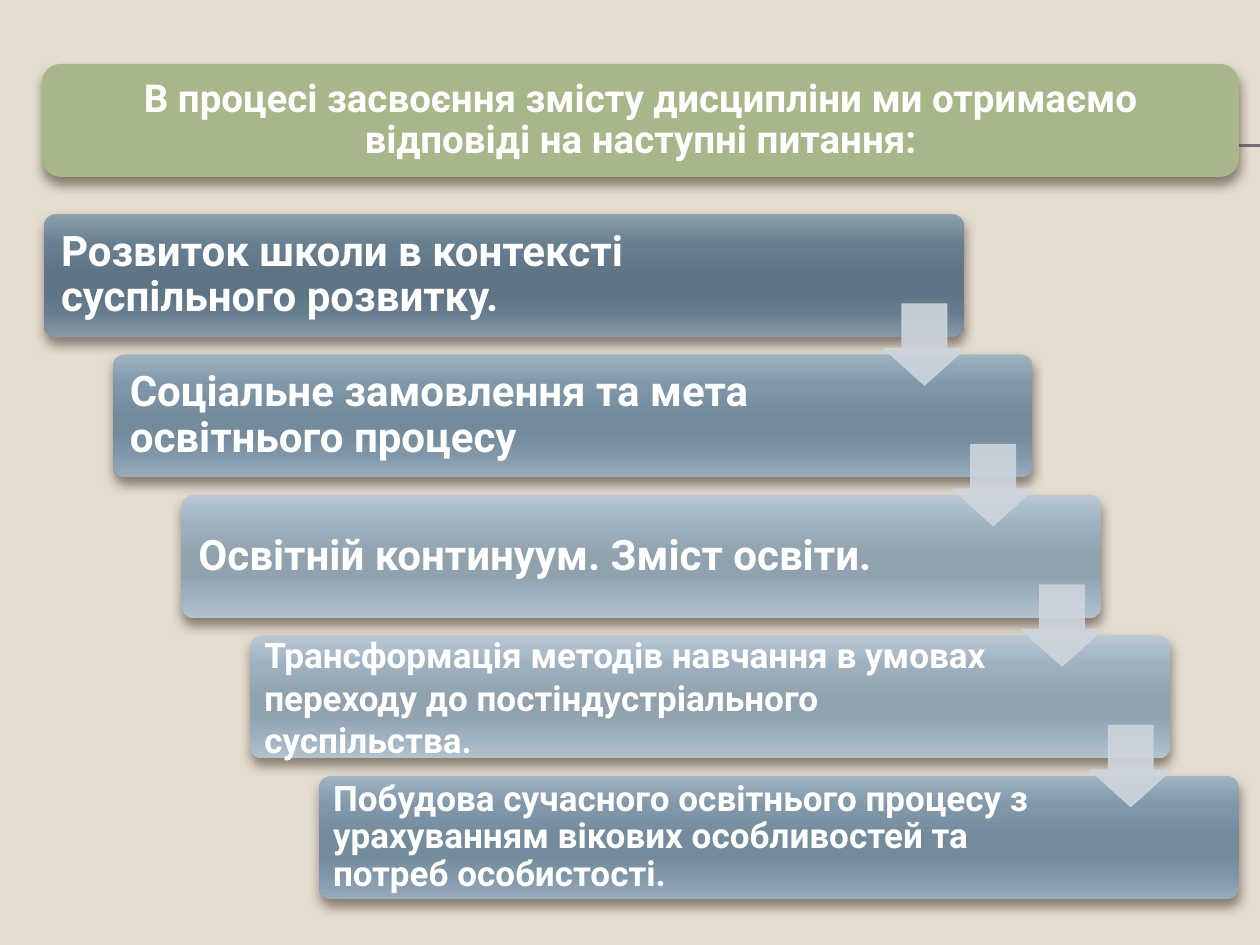
from lxml.etree import SubElement
from pptx import Presentation
from pptx.dml.color import RGBColor
from pptx.enum.shapes import MSO_CONNECTOR, MSO_SHAPE
from pptx.enum.text import MSO_ANCHOR, PP_ALIGN
from pptx.oxml.ns import qn
from pptx.util import Pt

PX = 914400 / 126
COLORS = {
    "background": "E3DCCF", "rule": "6F6F74", "header": "A7B789",
    "text": "FFFFFF", "arrow": "CDD5DC", "shadow": "4E3B30",
}
STOPS = (0, 25, 50, 65, 80, 100)
GRADIENTS = {
    "dark": ("8FA0AD", "677E8F", "5F7484", "5F7484", "677D8E", "8799A7"),
    "medium": ("9FB3C2", "7F97A8", "748B9C", "748B9C", "7E96A7", "98ACBC"),
    "light": ("B8C8D5", "9EB0BE", "91A2AF", "91A2AF", "9DAFBD", "B2C2CE"),
}
HEADER = "В процесі засвоєння змісту дисципліни ми отримаємо відповіді на наступні питання:"
STEPS = [
    ("Розвиток школи в контексті суспільного розвитку.", "dark",
     dict(size=24, inset=13)),
    ("Соціальне замовлення та мета освітнього процесу", "medium",
     dict(size=24, inset=13)),
    ("Освітній континуум. Зміст освіти.", "light",
     dict(size=24, inset=13)),
    ("Трансформація методів навчання в умовах переходу до постіндустріального суспільства.",
     "light", dict(size=20, inset=10, spacing=1.0)),
    ("Побудова сучасного освітнього процесу з урахуванням вікових особливостей та потреб особистості.",
     "medium", dict(size=20, inset=10)),
]


def emu(*lengths):
    return [round(length * PX) for length in lengths]


def color(name):
    return RGBColor.from_string(COLORS[name])


def add_element(parent, tag, **attributes):
    values = {key: str(value) for key, value in attributes.items()}
    return SubElement(parent, qn(tag), values)


def add_text(page, text, box, size, inset, spacing=0.9, align=PP_ALIGN.LEFT):
    frame = page.shapes.add_textbox(*emu(*box)).text_frame
    frame.word_wrap = True
    frame.vertical_anchor = MSO_ANCHOR.MIDDLE
    margin = emu(inset)[0]
    frame.margin_left = frame.margin_right = margin
    frame.margin_top = frame.margin_bottom = margin
    para = frame.paragraphs[0]
    para.alignment = align
    para.line_spacing = spacing
    span = para.add_run()
    span.text = text
    span.font.name = "Roboto"
    span.font.size = Pt(size)
    span.font.bold = True
    span.font.color.rgb = color("text")


def add_shape(page, kind, box, adjustments=()):
    shape = page.shapes.add_shape(kind, *emu(*box))
    shape.shadow.inherit = False
    for index, value in enumerate(adjustments):
        shape.adjustments[index] = value
    return shape


def add_shadow(shape):
    effects = shape._element.spPr.find(qn("a:effectLst"))
    shadow = add_element(effects, "a:outerShdw", blurRad=Pt(6), dist=Pt(4),
                         dir=5400000, rotWithShape=0)
    tint = add_element(shadow, "a:srgbClr", val=COLORS["shadow"])
    add_element(tint, "a:alpha", val=60000)


def fill_gradient(shape, tints):
    shape.fill.gradient()
    shape.fill.gradient_angle = 270  # counter-clockwise, so top to bottom
    stops = shape._element.spPr.find(qn("a:gradFill")).find(qn("a:gsLst"))
    for stop in list(stops):
        stops.remove(stop)
    for position, tint in zip(STOPS, tints):
        stop = add_element(stops, "a:gs", pos=position * 1000)
        add_element(stop, "a:srgbClr", val=tint)


def draw_rules(page, left, top, right):
    for y in (top, top + 1):
        rule = page.shapes.add_connector(MSO_CONNECTOR.STRAIGHT, *emu(left, y, right, y))
        rule.line.color.rgb = color("rule")
        rule.line.width = Pt(0.75)
        add_element(rule._element.spPr, "a:effectLst")


def draw_header(page, left, top, width, height):
    panel = add_shape(page, MSO_SHAPE.ROUNDED_RECTANGLE, (left, top, width, height))
    panel.fill.solid()
    panel.fill.fore_color.rgb = color("header")
    panel.line.fill.background()
    add_shadow(panel)
    add_text(page, HEADER, (left + 6, top + 6, width - 12, height - 12),
             size=22, inset=11, align=PP_ALIGN.CENTER)


def draw_step(page, box, text, tints, text_width, text_format):
    left, top, width, height = box
    panel = add_shape(page, MSO_SHAPE.ROUNDED_RECTANGLE, box, [0.1])
    fill_gradient(panel, tints)
    panel.line.fill.background()
    add_shadow(panel)
    add_text(page, text, (left + 4, top + 4, text_width, height - 8), **text_format)


def draw_arrow(page, left, top, size):
    arrow = add_shape(page, MSO_SHAPE.DOWN_ARROW, (left, top, size, size), [0.55, 0.45])
    arrow.line.width = Pt(0.79)
    for fill in (arrow.fill, arrow.line.fill):
        fill.solid()
        fill.fore_color.rgb = color("arrow")
    for tint in arrow._element.spPr.iter(qn("a:srgbClr")):
        add_element(tint, "a:alpha", val=90000)


def draw_staircase(page, left, top, width, height):
    """Spread the steps along the diagonal, then link them with arrows."""
    step_width, step_height, arrow_size = 920, 123, 81
    gaps = len(STEPS) - 1
    boxes = [(left + (width - step_width) * i / gaps,
              top + (height - step_height) * i / gaps, step_width, step_height)
             for i in range(len(STEPS))]
    for i, (box, (text, shade, text_format)) in enumerate(zip(boxes, STEPS)):
        text_width = 772 if i == 0 else 764
        draw_step(page, box, text, GRADIENTS[shade], text_width, text_format)
    for x, y, *_ in boxes[:-1]:
        draw_arrow(page, x + step_width - arrow_size + 1, y + 90, arrow_size)


def main():
    deck = Presentation()
    deck.slide_width, deck.slide_height = emu(1260, 945)
    page = deck.slides.add_slide(deck.slide_layouts[6])
    page.background.fill.solid()
    page.background.fill.fore_color.rgb = color("background")
    draw_rules(page, 70, 145, 1260)
    draw_header(page, 42, 64, 1197, 113)
    draw_staircase(page, 44, 214, 1195, 685)
    deck.save("out.pptx")


if __name__ == "__main__":
    main()
